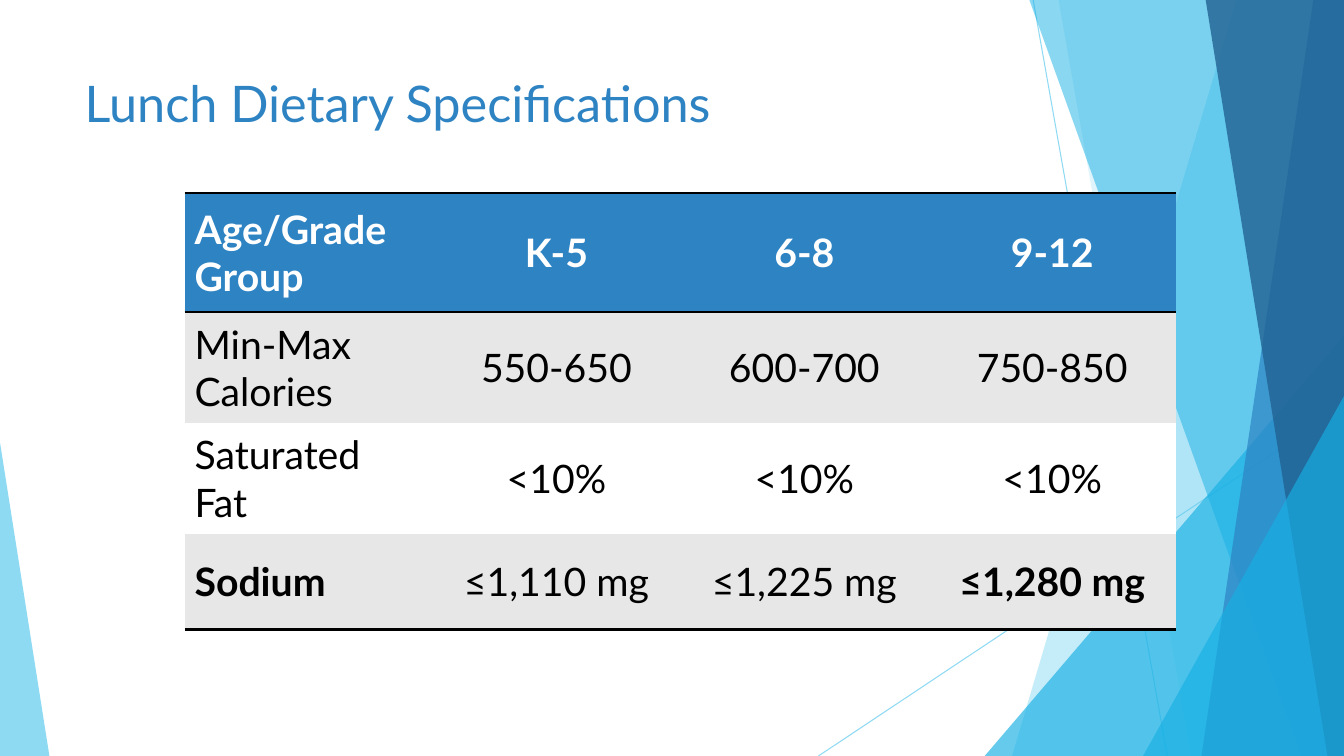
from dataclasses import dataclass

from lxml import etree
from pptx import Presentation
from pptx.dml.color import RGBColor
from pptx.enum.shapes import MSO_CONNECTOR, MSO_SHAPE
from pptx.enum.text import MSO_ANCHOR, PP_ALIGN
from pptx.oxml.ns import qn
from pptx.util import Pt

LEFT, CENTER = PP_ALIGN.LEFT, PP_ALIGN.CENTER
TOP, MIDDLE = MSO_ANCHOR.TOP, MSO_ANCHOR.MIDDLE
TRIANGLE, STRAIGHT = MSO_SHAPE.ISOSCELES_TRIANGLE, MSO_CONNECTOR.STRAIGHT


@dataclass(frozen=True)
class Theme:
    font: str = "Lato"
    title_size: int = 36
    table_size: int = 28
    blue: str = "2E83C3"
    navy: str = "226292"
    sky: str = "5FCBEF"
    cyan: str = "17B0E4"
    band: str = "E7E7E7"
    white: str = "FFFFFF"
    black: str = "000000"


T = Theme()
W, H = 960, 540


def write(tf, text, size, color, bold=False, align=LEFT, anchor=MIDDLE):
    tf.word_wrap = True
    tf.vertical_anchor = anchor
    p = tf.paragraphs[0]
    p.alignment = align
    r = p.add_run()
    r.text = text
    r.font.name = T.font
    r.font.size = Pt(size)
    r.font.bold = bold
    r.font.color.rgb = RGBColor.from_string(color)


def tint(fmt, element, color, alpha):
    fmt.solid()
    fmt.fore_color.rgb = RGBColor.from_string(color)
    clr = next(element.iter(qn("a:srgbClr")))
    etree.SubElement(clr, qn("a:alpha"), val=str(alpha * 1000))


prs = Presentation()
prs.slide_width, prs.slide_height = Pt(W), Pt(H)
s = prs.slides.add_slide(prs.slide_layouts[5])

for x1, y1, x2, y2 in [(738, 0, 833.8, H), (W, 290.2, 584.6, H)]:
    line = s.shapes.add_connector(STRAIGHT, Pt(x1), Pt(y1), Pt(x2), Pt(y2))
    line.line.width = Pt(0.75)
    tint(line.line.fill, line.element.spPr, T.sky, 70)
    etree.SubElement(line.element.spPr, qn("a:effectLst"))

facets = [
    ("band", (883.4, 722.9), T.sky, 36),
    ("band", (756, 851), T.sky, 20),
    ("triangle", (703.4, 239.8, W, 1), T.cyan, 66),
    ("band", (735.1, 929.5), T.cyan, 50),
    ("band", (938.2, 858.2), T.blue, 70),
    ("band", (861.1, 948.2), T.navy, 80),
    ("triangle", (816.5, 283, W, 1), T.cyan, 66),
    ("triangle", (0, 316.1, 35.3, 0), T.sky, 70),
]
for kind, geometry, color, alpha in facets:
    if kind == "band":
        top_x, bottom_x = geometry
        fb = s.shapes.build_freeform(Pt(top_x), Pt(-0.6))
        fb.add_line_segments([(Pt(W), Pt(-0.6)), (Pt(W), Pt(H)), (Pt(bottom_x), Pt(H))])
        sp = fb.convert_to_shape()
    else:
        left, top, right, apex = geometry
        sp = s.shapes.add_shape(TRIANGLE, Pt(left), Pt(top), Pt(right - left), Pt(H - top))
        sp.adjustments[0] = apex
    sp.shadow.inherit = False
    sp.line.fill.background()
    tint(sp.fill, sp.element.spPr, color, alpha)

title = s.shapes.title
title.left, title.top, title.width, title.height = Pt(53.3), Pt(48.2), Pt(676.8), Pt(103.7)
write(title.text_frame, "Lunch Dietary Specifications", T.title_size, T.blue, anchor=TOP)

rows = [
    ["Age/Grade Group", "K-5", "6-8", "9-12"],
    ["Min-Max Calories", "550-650", "600-700", "750-850"],
    ["Saturated Fat", "<10%", "<10%", "<10%"],
    ["Sodium", "≤1,110 mg", "≤1,225 mg", "≤1,280 mg"],
]
heights = [85, 79.2, 79.2, 68.4]
fills = [T.blue, T.band, T.white, T.band]
borders = [("a:lnT", "a:lnB"), (), (), ("a:lnB",)]
bold_cells = {"Sodium", "≤1,280 mg", *rows[0]}

frame = s.shapes.add_table(4, 4, Pt(131.8), Pt(137.9), Pt(708.4), Pt(sum(heights)))
table = frame.table
table.horz_banding = False
style = next(frame.element.iter(qn("a:tableStyleId")))
style.text = "{2D5ABB26-0587-4C30-8999-92F81FD0307C}"
for i, row in enumerate(rows):
    table.rows[i].height = Pt(heights[i])
    for j, text in enumerate(row):
        cell = table.cell(i, j)
        cell.fill.solid()
        cell.fill.fore_color.rgb = RGBColor.from_string(fills[i])
        cell.vertical_anchor = MIDDLE
        write(cell.text_frame, text, T.table_size, T.black if i else T.white,
              bold=text in bold_cells, align=CENTER if j else LEFT)
        tc_pr = cell._tc.get_or_add_tcPr()
        for k, side in enumerate(borders[i]):
            ln = etree.Element(qn(side), w=str(Pt(2)))
            fill = etree.SubElement(ln, qn("a:solidFill"))
            etree.SubElement(fill, qn("a:srgbClr"), val=T.black)
            tc_pr.insert(k, ln)

prs.save("out.pptx")
